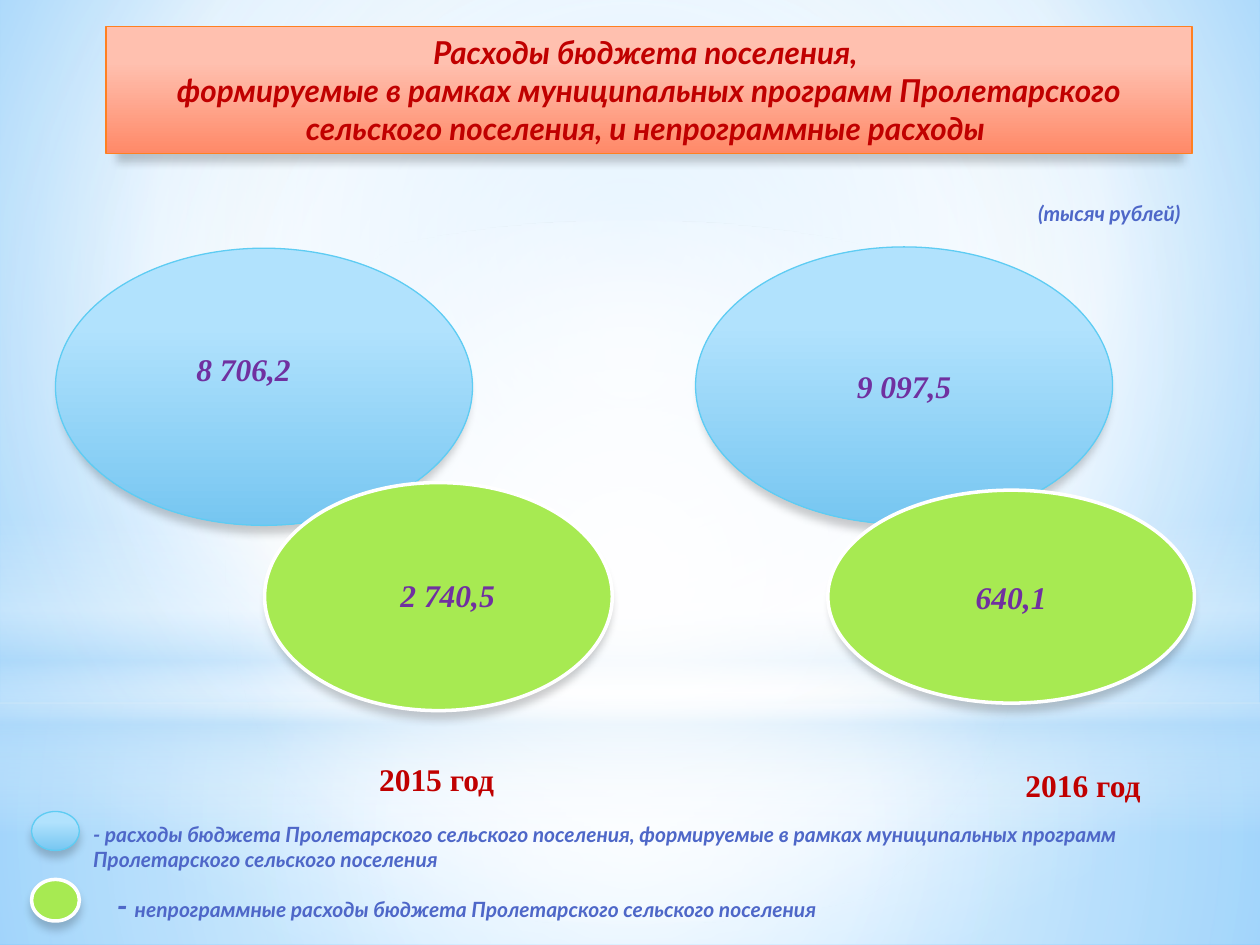
from dataclasses import dataclass

from lxml.etree import SubElement
from pptx import Presentation
from pptx.dml.color import RGBColor
from pptx.enum.shapes import MSO_SHAPE
from pptx.enum.text import MSO_ANCHOR, MSO_AUTO_SIZE, PP_ALIGN
from pptx.oxml.ns import qn
from pptx.util import Inches, Pt


@dataclass(frozen=True)
class Gradient:
    """Stops are (position %, colour, opacity %); a focus makes it circular."""
    stops: tuple
    focus: tuple = None


@dataclass(frozen=True)
class TextStyle:
    font: str
    size: int
    color: str
    italic: bool = True


@dataclass(frozen=True)
class ShapeStyle:
    fill: object
    line: str
    width: float


CENTER = (50, 50, 50, 50)


class Theme:
    backdrop = Gradient(((0, "9ED5FF", 100), (60, "FFFFFF", 100),
                         (100, "5BB9FF", 100)), (20, 10, 20, 60))
    floor = Gradient(((0, "FFFFFF", 91), (37, "FFFFFF", 76),
                      (100, "B4DCFA", 79)), CENTER)
    sky = Gradient(((0, "FFFFFF", 89), (48, "FFFFFF", 62),
                    (100, "B4DCFA", 79)), CENTER)
    horizon = Gradient(((0, "FFFFFF", 0), (29, "FFFFFF", 30), (45, "B4DCFA", 40),
                        (55, "FFFFFF", 26), (65, "B4DCFA", 60), (100, "FFFFFF", 0)))
    glow = Gradient(((0, "FFFFFF", 100), (56, "FFFFFF", 0)), CENTER)

    banner = ShapeStyle(Gradient(((28, "FFC0AF", 100), (100, "FF8968", 100))),
                        "FF8021", 0.75)
    program = ShapeStyle(Gradient(((28, "B1E2FD", 100), (100, "76C6F1", 100))),
                         "5ECCF3", 0.75)
    other = ShapeStyle("A7EA52", "FFFFFF", 2)

    title = TextStyle("Lato", 18, "C00000")
    amount = TextStyle("Times New Roman", 18, "7030A0")
    year = TextStyle("Times New Roman", 18, "C00000", italic=False)
    note = TextStyle("Lato", 12, "4E67C8")
    dash = TextStyle("Lato", 18, "4E67C8")


def apply_gradient(fill, holder, gradient):
    fill.background()
    grad = holder.makeelement(qn("a:gradFill"), rotWithShape="1")
    stop_list = SubElement(grad, qn("a:gsLst"))
    for position, color, opacity in gradient.stops:
        stop = SubElement(stop_list, qn("a:gs"), pos=str(position * 1000))
        rgb = SubElement(stop, qn("a:srgbClr"), val=color)
        if opacity < 100:
            SubElement(rgb, qn("a:alpha"), val=str(opacity * 1000))
    if gradient.focus:
        circle = SubElement(grad, qn("a:path"), path="circle")
        sides = {side: str(share * 1000) for side, share in zip("ltrb", gradient.focus)}
        SubElement(circle, qn("a:fillToRect"), **sides)
    else:
        SubElement(grad, qn("a:lin"), ang="5400000", scaled="0")
    holder.replace(holder.find(qn("a:noFill")), grad)


def add_filled(slide, preset, box, fill):
    shape = slide.shapes.add_shape(preset, *map(Inches, box))
    shape.shadow.inherit = False
    shape.line.fill.background()
    if isinstance(fill, Gradient):
        apply_gradient(shape.fill, shape._element.spPr, fill)
    else:
        shape.fill.solid()
        shape.fill.fore_color.rgb = RGBColor.from_string(fill)
    return shape


def add_raised(slide, preset, box, style):
    """Add an outlined shape with a soft shadow below it."""
    shape = add_filled(slide, preset, box, style.fill)
    shape.line.color.rgb = RGBColor.from_string(style.line)
    shape.line.width = Pt(style.width)
    effects = shape._element.spPr.find(qn("a:effectLst"))
    shadow = SubElement(effects, qn("a:outerShdw"), blurRad=str(Pt(5)), dist=str(Pt(4)),
                        dir="5400000", sx="98000", sy="98000", rotWithShape="0")
    color = SubElement(shadow, qn("a:srgbClr"), val="000000")
    SubElement(color, qn("a:alpha"), val="20000")
    return shape


def style_run(run, style):
    font = run.font
    font.name, font.size = style.font, Pt(style.size)
    font.bold, font.italic = True, style.italic
    font.color.rgb = RGBColor.from_string(style.color)


def write_centered(shape, text, style):
    frame = shape.text_frame
    frame.word_wrap = True
    frame.vertical_anchor = MSO_ANCHOR.MIDDLE
    paragraph = frame.paragraphs[0]
    paragraph.text = text
    paragraph.alignment = PP_ALIGN.CENTER
    for run in paragraph.runs:
        style_run(run, style)


def add_label(slide, box, *parts, wrap=False):
    """Add one line of (text, style) parts."""
    frame = slide.shapes.add_textbox(*map(Inches, box)).text_frame
    frame.word_wrap = wrap
    frame.auto_size = MSO_AUTO_SIZE.SHAPE_TO_FIT_TEXT
    for text, style in parts:
        run = frame.paragraphs[0].add_run()
        run.text = text
        style_run(run, style)


def add_backdrop(slide):
    fill = slide.background.fill
    fill.background()
    apply_gradient(fill, slide._element.cSld.bg.bgPr, Theme.backdrop)
    add_filled(slide, MSO_SHAPE.RECTANGLE, (0, 5.58, 10, 1.92), Theme.floor)
    add_filled(slide, MSO_SHAPE.RECTANGLE, (0, 0, 10, 5.58), Theme.sky)
    add_filled(slide, MSO_SHAPE.RECTANGLE, (0, 4.12, 10, 2.5), Theme.horizon)
    add_filled(slide, MSO_SHAPE.OVAL, (0, 1.75, 10, 5.58), Theme.glow)


def add_title(slide):
    banner = add_raised(slide, MSO_SHAPE.RECTANGLE, (0.84, 0.21, 8.62, 1.01), Theme.banner)
    write_centered(banner, "Расходы бюджета поселения, \vформируемые в рамках муниципальных "
                   "программ Пролетарского сельского поселения, и непрограммные расходы ",
                   Theme.title)
    add_label(slide, (8.14, 1.54, 1.5, 0.3), ("(тысяч рублей)", Theme.note))


def add_years(slide):
    oval = MSO_SHAPE.OVAL
    add_raised(slide, oval, (0.44, 1.97, 3.31, 2.2), Theme.program)
    program_2016 = add_raised(slide, oval, (5.52, 1.96, 3.31, 2.2), Theme.program)
    add_raised(slide, oval, (2.1, 3.83, 2.76, 1.81), Theme.other)
    other_2016 = add_raised(slide, oval, (6.57, 3.89, 2.91, 1.69), Theme.other)
    write_centered(program_2016, "9 097,5", Theme.amount)
    write_centered(other_2016, "640,1", Theme.amount)
    add_label(slide, (1.46, 2.73, 0.96, 0.4), ("8 706,2", Theme.amount))
    add_label(slide, (3.08, 4.52, 0.96, 0.4), ("2 740,5", Theme.amount))
    add_label(slide, (2.91, 5.98, 1.12, 0.4), ("2015 год", Theme.year))
    add_label(slide, (8.04, 6.03, 1.12, 0.4), ("2016 год", Theme.year))


def add_legend(slide):
    add_raised(slide, MSO_SHAPE.OVAL, (0.25, 6.44, 0.38, 0.31), Theme.program)
    add_raised(slide, MSO_SHAPE.OVAL, (0.25, 6.98, 0.38, 0.33), Theme.other)
    add_label(slide, (0.64, 6.47, 8.65, 0.5),
              ("- расходы бюджета Пролетарского сельского поселения, формируемые в рамках "
               "муниципальных программ Пролетарского сельского поселения", Theme.note),
              wrap=True)
    add_label(slide, (0.83, 6.98, 6.54, 0.4), ("- ", Theme.dash),
              ("непрограммные расходы бюджета Пролетарского сельского поселения", Theme.note))


def main():
    deck = Presentation()
    deck.slide_width, deck.slide_height = Inches(10), Inches(7.5)
    slide = deck.slides.add_slide(deck.slide_layouts[6])
    add_backdrop(slide)
    add_title(slide)
    add_years(slide)
    add_legend(slide)
    deck.save("out.pptx")


if __name__ == "__main__":
    main()
